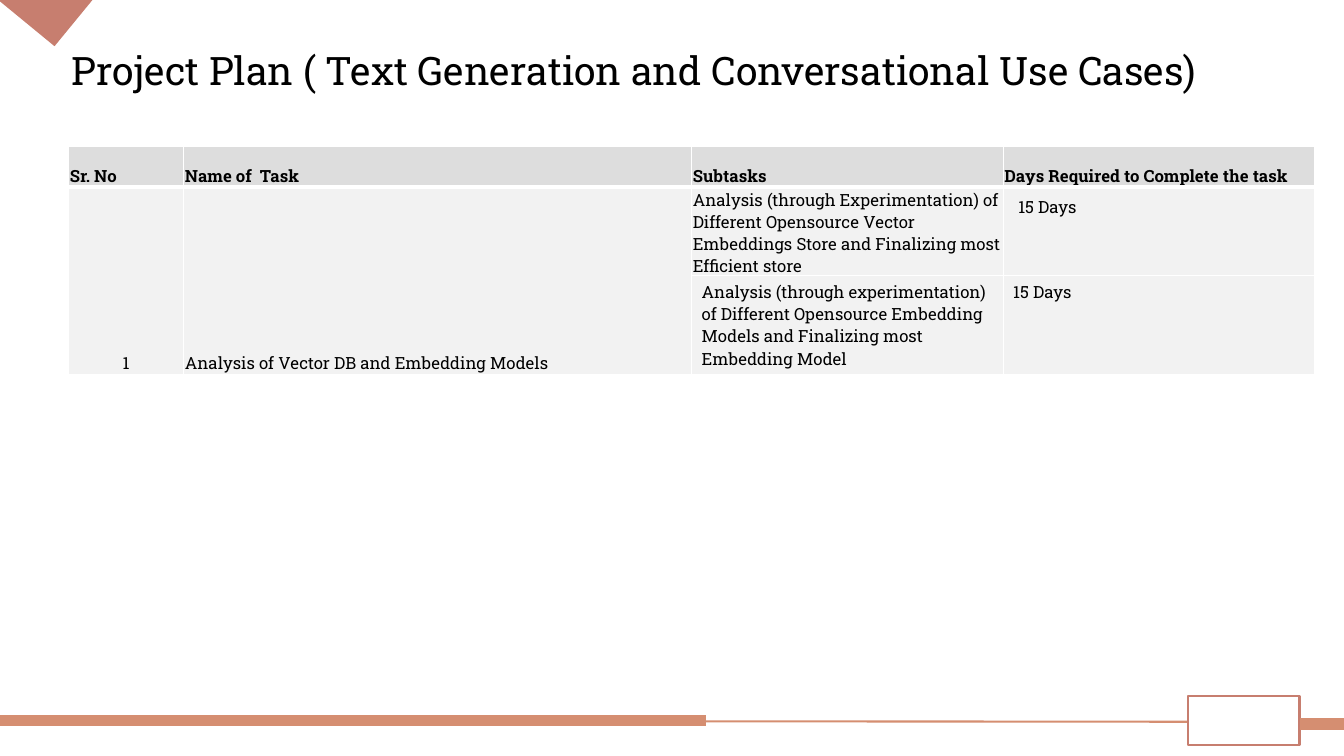
import pptx
import pptx.util
import pptx.dml.color
import pptx.enum.shapes
import pptx.enum.text
import pptx.oxml
import pptx.oxml.ns
from lxml import etree

Cm, Pt = pptx.util.Cm, pptx.util.Pt
RGBColor = pptx.dml.color.RGBColor
qn = pptx.oxml.ns.qn
MSO_SHAPE = pptx.enum.shapes.MSO_SHAPE
MSO_ANCHOR = pptx.enum.text.MSO_ANCHOR
PP_ALIGN = pptx.enum.text.PP_ALIGN

BLACK = RGBColor(0x00, 0x00, 0x00)
WHITE = RGBColor(0xFF, 0xFF, 0xFF)
HEADER_GREY = RGBColor(0xDD, 0xDD, 0xDD)
BODY_GREY = RGBColor(0xF2, 0xF2, 0xF2)
ROSE = RGBColor(0xC7, 0x7E, 0x6F)
SALMON = RGBColor(0xD5, 0x8E, 0x71)
FONT = "Roboto Slab"


def add_rule(start_x, start_y, end_x, end_y, width):
    rule = slide.shapes.add_connector(
        pptx.enum.shapes.MSO_CONNECTOR.STRAIGHT,
        Cm(start_x), Cm(start_y), Cm(end_x), Cm(end_y))
    rule.line.color.rgb = SALMON
    rule.line.width = Pt(width)
    etree.SubElement(rule._element.spPr, qn("a:effectLst"))


def add_border(cell, side, width):
    border = etree.SubElement(cell._tc.get_or_add_tcPr(), qn(f"a:ln{side}"), w=str(Pt(width)))
    fill = etree.SubElement(border, qn("a:solidFill"))
    etree.SubElement(fill, qn("a:srgbClr"), val=str(WHITE))


prs = pptx.Presentation()
prs.slide_width, prs.slide_height = Cm(33.87), Cm(19.05)
slide = prs.slides.add_slide(prs.slide_layouts[6])

# Footer and corner decoration
add_rule(0, 18.16, 33.87, 18.19, 1.5)

number_box = slide.shapes.add_shape(MSO_SHAPE.RECTANGLE, Cm(29.95), Cm(17.53), Cm(2.8), Cm(1.25))
number_box.shadow.inherit = False
number_box.fill.solid()
number_box.fill.fore_color.rgb = WHITE
number_box.line.color.rgb = ROSE
number_box.line.width = Pt(1.5)

corner = slide.shapes.add_shape(MSO_SHAPE.RIGHT_TRIANGLE, Cm(0.39), Cm(-0.92), Cm(1.5), Cm(1.84))
corner.rotation = 309.4
corner.shadow.inherit = False
corner.fill.solid()
corner.fill.fore_color.rgb = ROSE
corner.line.fill.background()

add_rule(0, 18.16, 17.78, 18.16, 8.25)
add_rule(32.77, 18.24, 33.87, 18.24, 8.25)

# Title
title = slide.shapes.add_textbox(Cm(1.32), Cm(0), Cm(31.83), Cm(3.68)).text_frame
title.word_wrap = True
title.vertical_anchor = MSO_ANCHOR.MIDDLE
heading = title.paragraphs[0]
heading.text = " Project Plan ( Text Generation and Conversational Use Cases)"
heading.line_spacing = 0.9
heading.font.name = FONT
heading.font.size = Pt(28)
heading.font.color.rgb = BLACK

# Task table
PLAN = [
    ["Sr. No", "Name of  Task", "Subtasks", "Days Required to Complete the task"],
    ["1", "Analysis of Vector DB and Embedding Models",
     "Analysis (through Experimentation) of Different Opensource Vector "
     "Embeddings Store and Finalizing most Efficient store", "15 Days"],
    ["", "",
     "Analysis (through experimentation) of Different Opensource Embedding "
     "Models and Finalizing most Embedding Model", "15 Days"],
]
COLUMN_WIDTHS = [2.9, 12.8, 7.85, 7.85]
ROW_HEIGHTS = [1.04, 2.23, 2.48]
ROOMY_CELLS = {(1, 3), (2, 2), (2, 3)}

plan_table = slide.shapes.add_table(
    3, 4, Cm(1.73), Cm(3.68), Cm(sum(COLUMN_WIDTHS)), Cm(sum(ROW_HEIGHTS))).table
plan_table.horz_banding = False
for column, width in zip(plan_table.columns, COLUMN_WIDTHS):
    column.width = Cm(width)
for row, height in zip(plan_table.rows, ROW_HEIGHTS):
    row.height = Cm(height)

for r, texts in enumerate(PLAN):
    for c, text in enumerate(texts):
        cell = plan_table.cell(r, c)
        for side in "LRTB":
            heavy = (r, side) in {(0, "B"), (1, "T")}
            add_border(cell, side, 3 if heavy else 1)
        cell.fill.solid()
        cell.fill.fore_color.rgb = BODY_GREY if r else HEADER_GREY
        if (r, c) not in ROOMY_CELLS:
            cell.vertical_anchor = MSO_ANCHOR.BOTTOM
            cell.margin_left = cell.margin_right = cell.margin_top = Cm(0.03)
            cell.margin_bottom = Cm(0)
        paragraph = cell.text_frame.paragraphs[0]
        if (r, c) == (1, 3):
            lead = paragraph.add_run()
            lead.text = " "
            lead.font.name = "Calibri"
            lead.font.size = Pt(16)
        if text:
            paragraph.add_run().text = text
        paragraph.font.name = FONT
        paragraph.font.size = Pt(12)
        paragraph.font.bold = r == 0
        paragraph.font.color.rgb = BLACK

plan_table.cell(1, 0).text_frame.paragraphs[0].alignment = PP_ALIGN.CENTER
for c in range(2):
    plan_table.cell(1, c).merge(plan_table.cell(2, c))

prs.save("out.pptx")
